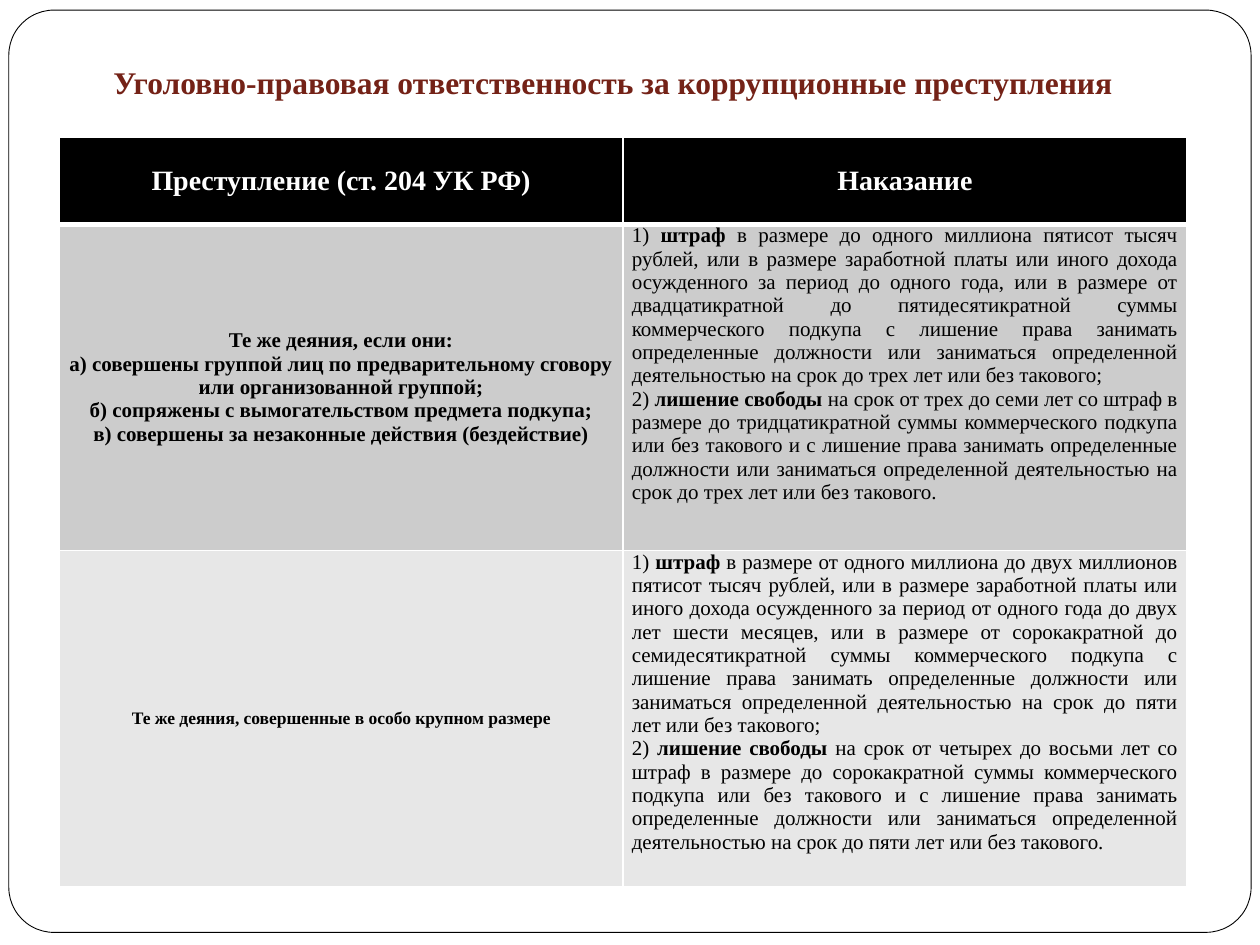
from pptx import Presentation
from pptx.dml.color import RGBColor as RGB
from pptx.enum.shapes import MSO_SHAPE as Shape
from pptx.enum.text import MSO_ANCHOR as Anchor, MSO_AUTO_SIZE as Fit, PP_ALIGN as Align
from pptx.oxml import parse_xml
from pptx.oxml.ns import nsdecls
from pptx.util import Inches, Pt

THEME = {
    "font": "Times New Roman",
    "title": "742217", "ink": "000000", "paper": "FFFFFF",
    "head": "000000", "bands": ["CCCCCC", "E7E7E7"],
    "title_size": 18, "head_size": 16, "text_size": 12, "small_size": 10,
}

TITLE = "Уголовно-правовая ответственность за коррупционные преступления"
HEADS = ["Преступление (ст. 204 УК РФ)", "Наказание"]
# Each row: size of the left text, crime lines, penalty lines; * encloses bold.
ROWS = [
    (THEME["text_size"],
     ["*Те же деяния, если они:*",
      "*а) совершены группой лиц по предварительному сговору или организованной группой;*",
      "*б) сопряжены с вымогательством предмета подкупа;*",
      "*в) совершены за незаконные действия (бездействие)*"],
     ["1) *штраф* в размере до одного миллиона пятисот тысяч рублей, или в размере "
      "заработной платы или иного дохода осужденного за период до одного года, или в "
      "размере от двадцатикратной до пятидесятикратной суммы коммерческого подкупа с "
      "лишение права занимать определенные должности или заниматься определенной "
      "деятельностью на срок до трех лет или без такового;",
      "2) *лишение свободы *на срок от трех до семи лет со штраф в размере до "
      "тридцатикратной суммы коммерческого подкупа или без такового и с лишение права "
      "занимать определенные должности или заниматься определенной деятельностью на "
      "срок до трех лет или без такового."]),
    (THEME["small_size"],
     ["*Те же деяния, совершенные в особо крупном размере*"],
     ["1) *штраф* в размере от одного миллиона до двух миллионов пятисот тысяч рублей, "
      "или в размере заработной платы или иного дохода осужденного за период от одного "
      "года до двух лет шести месяцев, или в размере от сорокакратной до "
      "семидесятикратной суммы коммерческого подкупа с лишение права занимать "
      "определенные должности или заниматься определенной деятельностью на срок до "
      "пяти лет или без такового;",
      "2) *лишение свободы *на срок от четырех до восьми лет со штраф в размере до "
      "сорокакратной суммы коммерческого подкупа или без такового и с лишение права "
      "занимать определенные должности или заниматься определенной деятельностью на "
      "срок до пяти лет или без такового."]),
]
HEIGHTS = [0.69, 2.59, 2.67]
WIDTH = 8.95


def write(frame, lines, size, color=THEME["ink"], align=Align.CENTER):
    """Fill a text frame; asterisks switch bold on and off."""
    for i, line in enumerate(lines):
        para = frame.paragraphs[0] if i == 0 else frame.add_paragraph()
        para.alignment = align
        for j, part in enumerate(line.split("*")):
            if part:
                run = para.add_run()
                run.text = part
                font = run.font
                font.name, font.size, font.bold = THEME["font"], Pt(size), j % 2 == 1
                font.color.rgb = RGB.from_string(color)


def inset(box, left, top, right, bottom):
    box.margin_left, box.margin_top = Inches(left), Inches(top)
    box.margin_right, box.margin_bottom = Inches(right), Inches(bottom)


def style(cell, fill, top, bottom):
    """Set the white borders, then the fill, which must follow them."""
    props = cell._tc.get_or_add_tcPr()
    for side, width in (("L", 1), ("R", 1), ("T", top), ("B", bottom)):
        props.append(parse_xml(
            f'<a:ln{side} {nsdecls("a")} w="{Pt(width)}"><a:solidFill>'
            f'<a:srgbClr val="{THEME["paper"]}"/></a:solidFill></a:ln{side}>'))
    cell.fill.solid()
    cell.fill.fore_color.rgb = RGB.from_string(fill)


def add_frame(slide):
    frame = slide.shapes.add_shape(Shape.ROUNDED_RECTANGLE, Inches(0.07), Inches(0.08),
                                   Inches(9.86), Inches(7.32))
    frame.adjustments[0] = 0.049
    frame.shadow.inherit = False
    frame.fill.solid()
    frame.fill.fore_color.rgb = RGB.from_string(THEME["paper"])
    frame.line.color.rgb = RGB.from_string(THEME["ink"])
    frame.line.width = Pt(0.5)
    slide.shapes._spTree.insert(2, frame._element)  # send to back


def add_title(slide):
    title = slide.shapes.title
    title.left, title.top = Inches(0.39), Inches(0.39)
    title.width, title.height = Inches(WIDTH), Inches(0.51)
    frame = title.text_frame
    frame.word_wrap, frame.auto_size = True, Fit.NONE
    frame.vertical_anchor = Anchor.BOTTOM
    inset(frame, 0.1, 0.05, 0.1, 0.1)
    write(frame, [f"*{TITLE}*"], THEME["title_size"], THEME["title"])


def add_grid(slide):
    table = slide.shapes.add_table(len(HEIGHTS), len(HEADS), Inches(0.47), Inches(1.09),
                                   Inches(WIDTH), Inches(sum(HEIGHTS))).table
    for col in table.columns:
        col.width = Inches(WIDTH / len(HEADS))
    for row, height in zip(table.rows, HEIGHTS):
        row.height = Inches(height)
    for c, head in enumerate(HEADS):
        cell = table.cell(0, c)
        cell.vertical_anchor = Anchor.MIDDLE
        style(cell, THEME["head"], 1, 3)
        write(cell.text_frame, [f"*{head}*"], THEME["head_size"], THEME["paper"])
    for r, (size, crime, penalty) in enumerate(ROWS, 1):
        left, right = table.cell(r, 0), table.cell(r, 1)
        for cell in (left, right):
            inset(cell, 0.07, 0, 0.07, 0)
            style(cell, THEME["bands"][r - 1], 3 if r == 1 else 1, 1)
        left.vertical_anchor = Anchor.MIDDLE
        write(left.text_frame, crime, size)
        write(right.text_frame, penalty, THEME["text_size"], align=Align.JUSTIFY)


def main():
    deck = Presentation()
    deck.slide_width, deck.slide_height = Inches(10), Inches(7.5)
    slide = deck.slides.add_slide(deck.slide_layouts[5])
    add_frame(slide)
    add_grid(slide)
    add_title(slide)
    deck.save("out.pptx")


if __name__ == "__main__":
    main()
